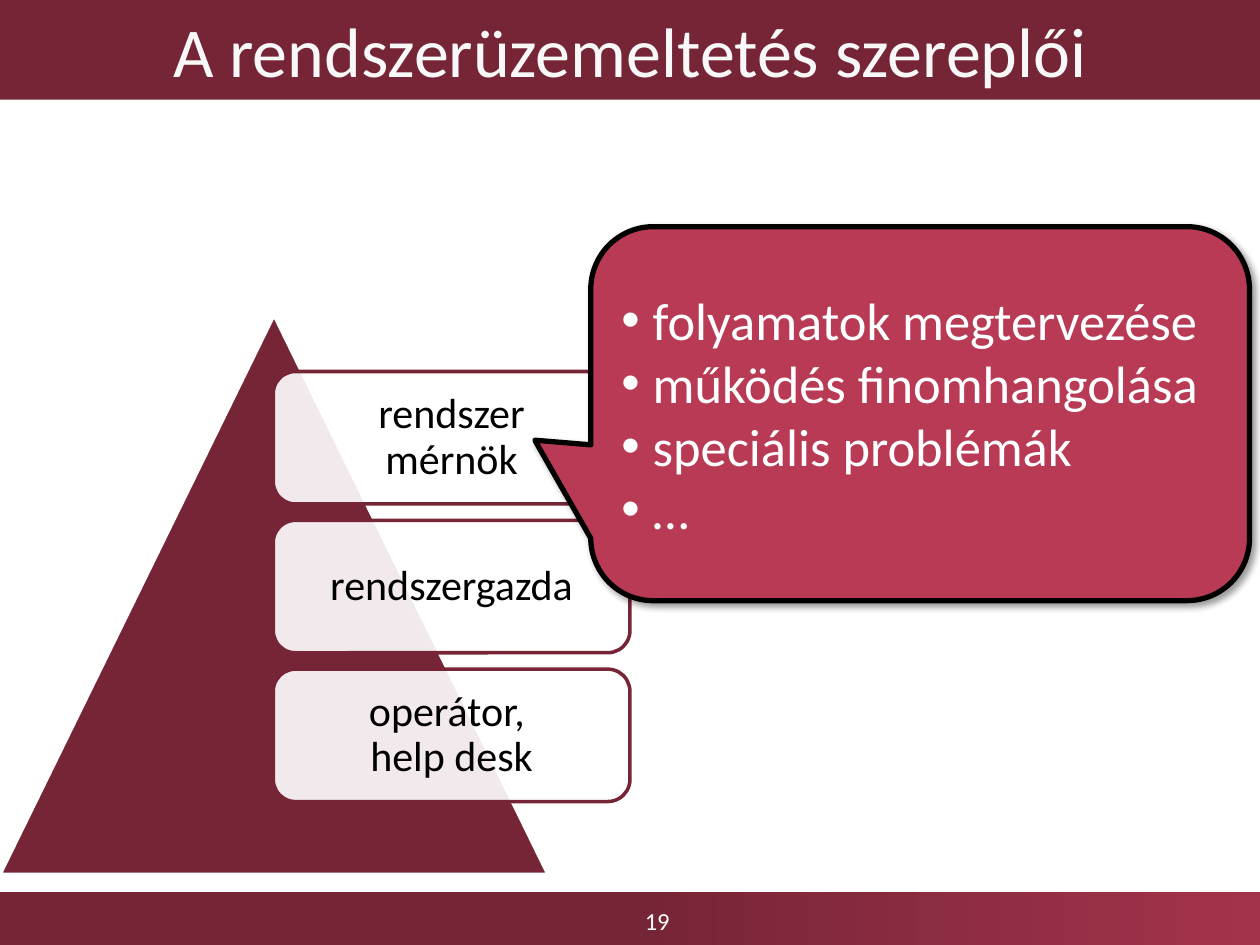
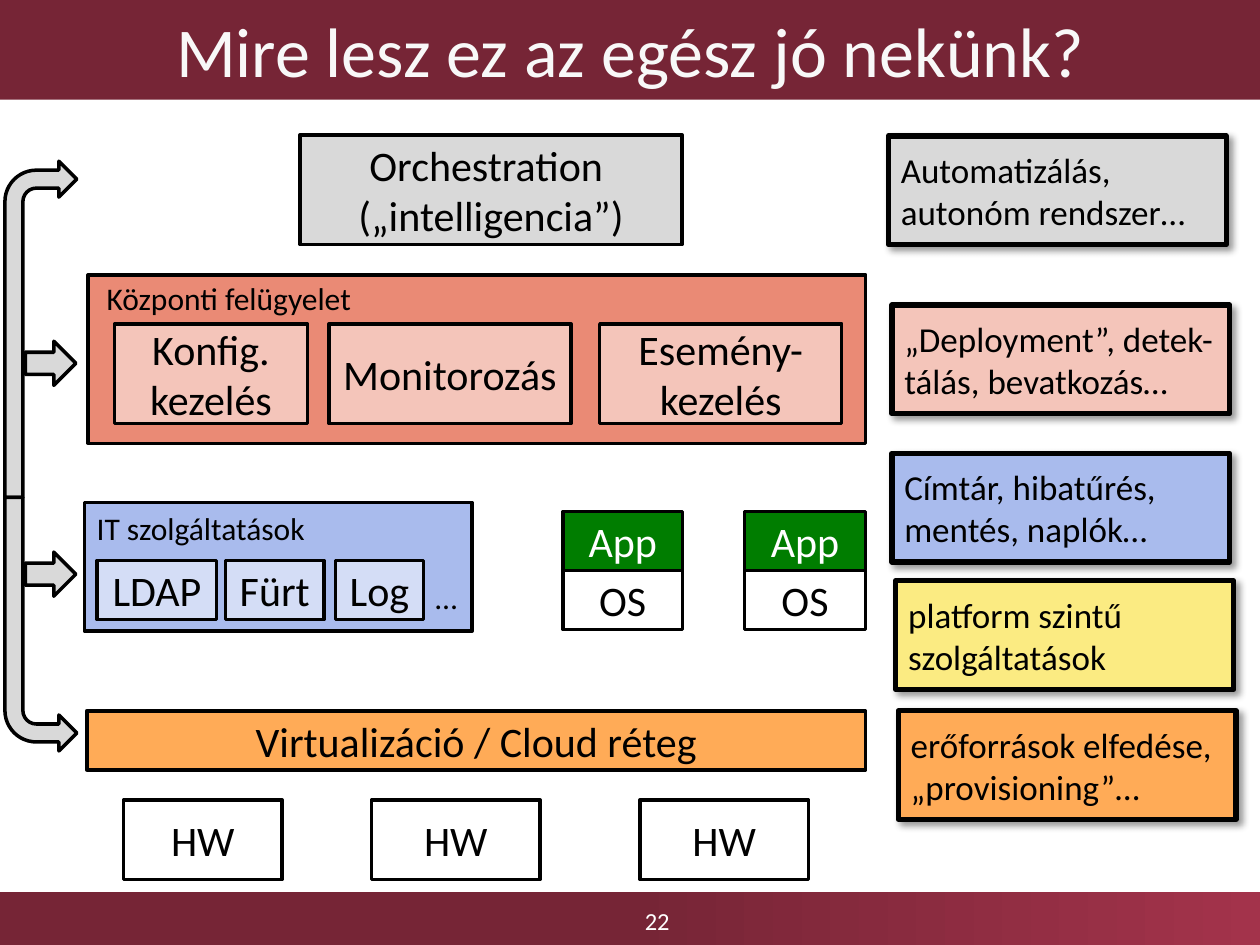
import dataclasses

import lxml.etree
import pptx
import pptx.dml.color
import pptx.enum.shapes
import pptx.enum.text
import pptx.oxml.ns
import pptx.util

Cm = pptx.util.Cm
Pt = pptx.util.Pt
qn = pptx.oxml.ns.qn
SHAPE = pptx.enum.shapes.MSO_SHAPE
ALIGN = pptx.enum.text.PP_ALIGN
ANCHOR = pptx.enum.text.MSO_ANCHOR


@dataclasses.dataclass(frozen=True)
class Theme:
    font: str = "Calibri"
    maroon: str = "762536"
    maroon_light: str = "A3334B"
    crimson: str = "B83A55"
    title_text: str = "F8F8F8"
    white: str = "FFFFFF"
    black: str = "000000"
    gray: str = "D9D9D9"
    coral: str = "EA8A75"
    coral_light: str = "F4C5BA"
    blue: str = "A9BBED"
    blue_light: str = "D4DDF6"
    green: str = "007D00"
    orange: str = "FFAB57"
    yellow: str = "FBEB82"
    title_size: int = 40
    callout_size: int = 30
    box_size: int = 24
    note_size: int = 20
    label_size: int = 18
    number_size: int = 14


THEME = Theme()
PAGE_WIDTH, PAGE_HEIGHT = 25.4, 19.05
TITLE_HEIGHT = 2.01
FOOTER_TOP = 17.98

ROLES_TITLE = "A rendszerüzemeltetés szereplői"
ROLES = ["rendszer\nmérnök", "rendszergazda", "operátor, \nhelp desk"]
ENGINEER_TASKS = ["folyamatok megtervezése", "működés finomhangolása", "speciális problémák", "…"]

STACK_TITLE = "Mire lesz ez az egész jó nekünk?"
LAYERS = [
    ("", (1.78, 5.54, 15.67, 3.4), THEME.coral),
    ("", (1.7, 10.13, 7.82, 2.59), THEME.blue),
    ("Virtualizáció / Cloud réteg", (1.75, 14.33, 15.7, 1.19), THEME.orange),
    ("Orchestration \n(„intelligencia”)", (6.05, 2.72, 7.7, 2.21), THEME.gray),
]
BOX_ROWS = [
    (6.53, 2.01, THEME.coral_light, THEME.black,
     [("Konfig. kezelés", 2.31, 3.89), ("Monitorozás", 6.63, 4.88), ("Esemény-kezelés", 12.09, 4.88)]),
    (11.3, 1.19, THEME.blue_light, THEME.black,
     [("LDAP", 1.96, 2.41), ("Fürt", 4.55, 1.98), ("Log", 6.76, 1.78)]),
    (11.5, 1.19, THEME.white, THEME.black, [("OS", 11.35, 2.41), ("OS", 15.01, 2.44)]),
    (10.31, 1.19, THEME.green, THEME.white, [("App", 11.35, 2.41), ("App", 15.01, 2.44)]),
    (16.13, 1.6, THEME.white, THEME.black, [("HW", 2.49, 3.2), ("HW", 7.49, 3.4), ("HW", 12.9, 3.4)]),
]
LABELS = [
    ("Központi felügyelet", (1.9, 5.51, 6.6, 1.02)),
    ("IT szolgáltatások", (1.7, 10.13, 5.23, 1.02)),
    ("…", (8.53, 11.53, 0.99, 1.02)),
]
ARROWS = [
    (SHAPE.BENT_ARROW, (0.1, 3.25, 1.45, 6.78), False),
    (SHAPE.BENT_ARROW, (0.1, 10.03, 1.45, 5.11), True),
    (SHAPE.RIGHT_ARROW, (0.51, 11.13, 1.02, 0.89), False),
    (SHAPE.RIGHT_ARROW, (0.51, 6.88, 1.02, 0.89), False),
]
NOTE_SIZE = (6.81, 2.19)
NOTES = [
    (["erőforrások elfedése,", "„provisioning”…"], (18.11, 14.33), THEME.orange),
    (["platform szintű\nszolgáltatások"], (18.06, 11.71), THEME.yellow),
    (["Címtár, hibatűrés, mentés, naplók…"], (17.98, 9.14), THEME.blue),
    (["„Deployment”, detek-tálás, bevatkozás…"], (17.98, 6.15), THEME.coral_light),
    (["Automatizálás, \nautonóm rendszer…"], (17.91, 2.74), THEME.gray),
]


def rgb(color):
    return pptx.dml.color.RGBColor.from_string(color)


def lengths(area):
    return [Cm(value) for value in area]


def write(shape, paragraphs, size, color, align=ALIGN.CENTER, anchor=ANCHOR.MIDDLE, bullet=False, spacing=None):
    frame = shape.text_frame
    frame.word_wrap = True
    frame.auto_size = pptx.enum.text.MSO_AUTO_SIZE.NONE
    frame.vertical_anchor = anchor
    for index, text in enumerate(paragraphs):
        para = frame.paragraphs[0] if index == 0 else frame.add_paragraph()
        para.alignment = align
        if spacing:
            para.line_spacing = spacing
        if bullet:
            properties = para._p.get_or_add_pPr()
            properties.set("marL", str(Cm(0.63)))
            properties.set("indent", str(-Cm(0.63)))
            lxml.etree.SubElement(properties, qn("a:buFont"), typeface="Arial")
            lxml.etree.SubElement(properties, qn("a:buChar"), char="•")
        for line_index, line in enumerate(text.split("\n")):
            if line_index:
                para.add_line_break()
            span = para.add_run()
            span.text = line
            span.font.name = THEME.font
            span.font.size = Pt(size)
            span.font.color.rgb = rgb(color)


def add_box(page, kind, area, fill, line=THEME.black, width=2, shadow=False):
    box = page.shapes.add_shape(kind, *lengths(area))
    box.fill.solid()
    box.fill.fore_color.rgb = rgb(fill)
    box.line.color.rgb = rgb(line)
    box.line.width = Pt(width)
    box.shadow.inherit = False
    if shadow:
        effects = box._element.spPr.find(qn("a:effectLst"))
        outer = lxml.etree.SubElement(effects, qn("a:outerShdw"), blurRad=str(Pt(4)), dist=str(Pt(3)),
                                      dir="2700000", algn="tl", rotWithShape="0")
        tint = lxml.etree.SubElement(outer, qn("a:srgbClr"), val=THEME.black)
        lxml.etree.SubElement(tint, qn("a:alpha"), val="40000")
    return box


def add_page(deck, title_text, number):
    page = deck.slides.add_slide(deck.slide_layouts[5])
    title = page.shapes.title
    title.left, title.top, title.width, title.height = lengths((0, 0, PAGE_WIDTH, TITLE_HEIGHT))
    title.fill.solid()
    title.fill.fore_color.rgb = rgb(THEME.maroon)
    write(title, [title_text], THEME.title_size, THEME.title_text)

    band = page.shapes.add_shape(
        SHAPE.RECTANGLE, *lengths((0, FOOTER_TOP, PAGE_WIDTH, PAGE_HEIGHT - FOOTER_TOP)))
    band.shadow.inherit = False
    band.line.fill.background()
    band.fill.gradient()
    band.fill.gradient_angle = 0
    stops = zip(band.fill.gradient_stops, (0.5, 1), (THEME.maroon, THEME.maroon_light))
    for stop, position, color in stops:
        stop.position = position
        stop.color.rgb = rgb(color)
    number_box = page.shapes.add_textbox(*lengths((9.12, 18.06, 8.26, 0.99)))
    write(number_box, [str(number)], THEME.number_size, THEME.white)
    return page


def build_roles(deck):
    page = add_page(deck, ROLES_TITLE, 19)
    add_box(page, SHAPE.ISOSCELES_TRIANGLE, (0, 6.35, 11.05, 11.28), THEME.maroon, THEME.white)
    for index, role in enumerate(ROLES):
        card = add_box(page, SHAPE.ROUNDED_RECTANGLE, (5.51, 7.49 + 3 * index, 7.19, 2.67),
                       THEME.white, THEME.maroon)
        tint = card._element.spPr.find(qn("a:solidFill")).find(qn("a:srgbClr"))
        lxml.etree.SubElement(tint, qn("a:alpha"), val="90000")
        write(card, [role], THEME.box_size, THEME.black, spacing=0.9)
    callout = add_box(page, SHAPE.ROUNDED_RECTANGULAR_CALLOUT, (11.91, 4.57, 13.28, 7.54),
                      THEME.crimson, width=3, shadow=True)
    for index, value in enumerate((-0.585, 0.071, 0.167)):
        callout.adjustments[index] = value
    write(callout, ENGINEER_TASKS, THEME.callout_size, THEME.white, ALIGN.LEFT, bullet=True)


def build_stack(deck):
    page = add_page(deck, STACK_TITLE, 22)
    for text, area, fill in LAYERS:
        layer = add_box(page, SHAPE.RECTANGLE, area, fill)
        if text:
            write(layer, [text], THEME.box_size, THEME.black)
    for top, height, fill, color, boxes in BOX_ROWS:
        for text, left, width in boxes:
            box = add_box(page, SHAPE.RECTANGLE, (left, top, width, height), fill)
            write(box, [text], THEME.box_size, color)
    for text, area in LABELS:
        label = page.shapes.add_textbox(*lengths(area))
        write(label, [text], THEME.label_size, THEME.black, ALIGN.LEFT, ANCHOR.TOP)
    for kind, area, flipped in ARROWS:
        arrow = add_box(page, kind, area, THEME.gray)
        if flipped:
            arrow._element.spPr.find(qn("a:xfrm")).set("flipV", "1")
    for paragraphs, corner, fill in NOTES:
        note = add_box(page, SHAPE.RECTANGLE, corner + NOTE_SIZE, fill, width=3, shadow=True)
        write(note, paragraphs, THEME.note_size, THEME.black, ALIGN.LEFT)


def main():
    deck = pptx.Presentation()
    deck.slide_width, deck.slide_height = Cm(PAGE_WIDTH), Cm(PAGE_HEIGHT)
    build_roles(deck)
    build_stack(deck)
    deck.save("out.pptx")


if __name__ == "__main__":
    main()
